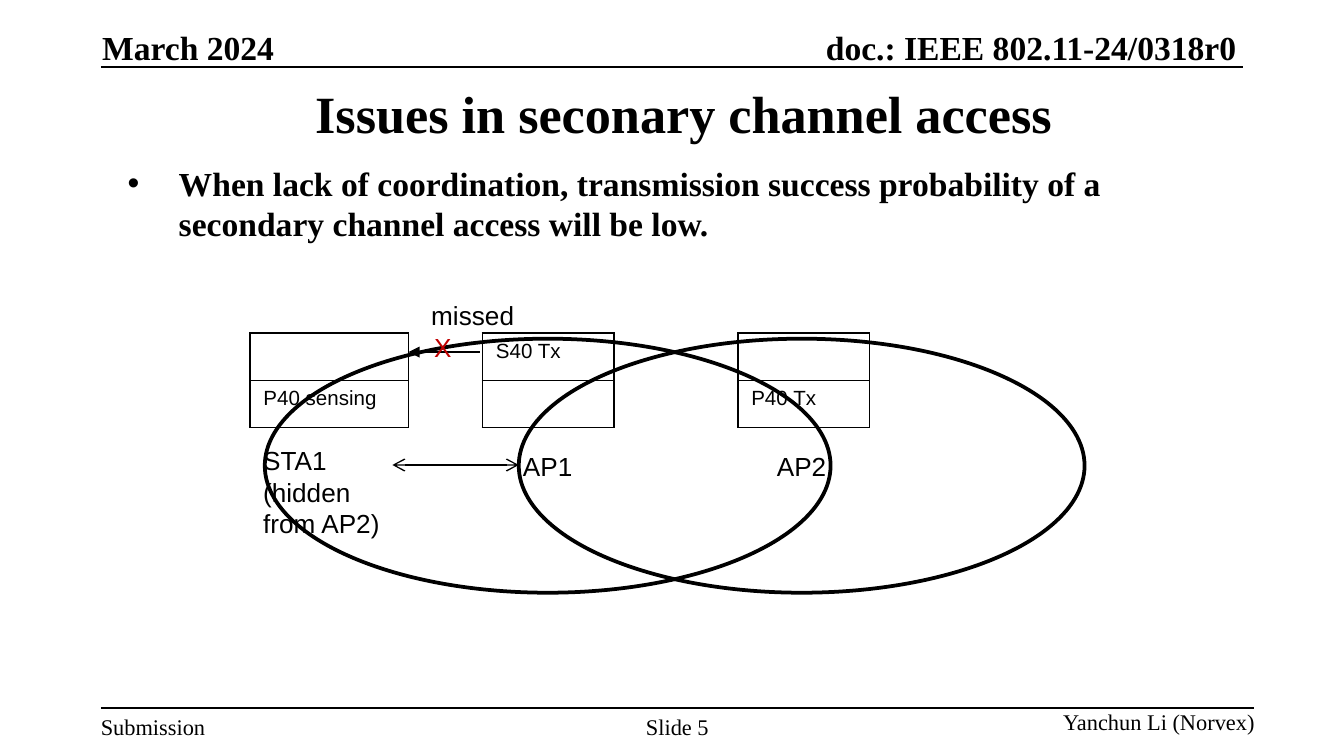
from dataclasses import dataclass
from typing import Any

from lxml import etree
from pptx import Presentation
from pptx import util as u
from pptx.dml import color
from pptx.enum import shapes, text
from pptx.oxml import ns

SERIF, SANS = "Times New Roman", "Arial"
BLACK, RED = "000000", "C00000"
LEFT, CENTER, RIGHT = text.PP_ALIGN.LEFT, text.PP_ALIGN.CENTER, text.PP_ALIGN.RIGHT
TOP, MIDDLE, BOTTOM = text.MSO_ANCHOR.TOP, text.MSO_ANCHOR.MIDDLE, text.MSO_ANCHOR.BOTTOM
FIXED, GROW = text.MSO_AUTO_SIZE.NONE, text.MSO_AUTO_SIZE.SHAPE_TO_FIT_TEXT
Area = tuple[float, float, float, float]


@dataclass
class Label:
    words: str
    area: Area
    size: float = 12
    font: str = SERIF
    bold: bool = False
    hex_color: str = BLACK
    align: Any = LEFT
    anchor: Any = TOP
    inset: tuple[float, float] = (0, 0)
    wrap: bool = True
    fit: Any = FIXED


@dataclass
class Channels:
    left: float
    width: float
    rows: tuple[str, str]


@dataclass
class Line:
    start: tuple[float, float]
    end: tuple[float, float]
    weight: float = 0.75
    head: str = "none"
    tail: str = "none"


HEADER = {"size": 18, "bold": True, "anchor": BOTTOM}
NOTE = {"size": 14, "font": SANS, "inset": (0.1, 0.05), "fit": GROW}
FRAME_LABELS = [
    Label("doc.: IEEE 802.11-24/0318r0", (5.61, 0.27, 3.59, 0.23), align=RIGHT, **HEADER),
    Label("Submission", (0.75, 5.31, 0.79, 0.15)),
    Label("Yanchun Li (Norvex)", (7.91, 5.27, 1.68, 0.3)),
    Label("Slide 5", (4.75, 5.31, 0.58, 0.15), align=CENTER),
    Label("March 2024", (0.76, 0.27, 1.79, 0.23), **HEADER),
]
NOTES = [
    Label("STA1\n(hidden from AP2)", (1.86, 3.26, 1.07, 0.81), **NOTE),
    Label("X", (3.23, 2.42, 0.05, 0.4), hex_color=RED, **NOTE),
    Label("missed", (3.11, 2.18, 0.82, 0.34), wrap=False, **NOTE),
]
ACCESS_POINTS = [("AP1", 1.97), ("AP2", 3.86)]
TABLES = [
    Channels(5.49, 0.98, ("", "P40 Tx")),
    Channels(3.59, 0.98, ("S40 Tx", "")),
    Channels(1.86, 1.18, ("", "P40 sensing")),
]
RULES = [Line((0.75, 0.5), (9.25, 0.5), 1), Line((0.75, 5.27), (9.33, 5.27), 1)]
ARROWS = [
    Line((3.57, 2.62), (3.04, 2.62), tail="triangle"),
    Line((2.92, 3.46), (3.86, 3.46), head="arrow", tail="arrow"),
]


def rgb(value: str) -> color.RGBColor:
    """Turn a hex string into a colour."""
    return color.RGBColor.from_string(value)


def write(frame: Any, words: str, *, size: float, font: str = SERIF, bold: bool = False,
          hex_color: str = BLACK, align: Any = LEFT) -> None:
    """Fill a text frame with formatted paragraphs."""
    frame.text = words
    for para in frame.paragraphs:
        para.alignment = align
        for span in para.runs:
            span.font.name, span.font.size = font, u.Pt(size)
            span.font.bold = bold
            span.font.color.rgb = rgb(hex_color)


def set_frame(frame: Any, inset: tuple[float, float], anchor: Any = TOP,
              wrap: bool = True, fit: Any = FIXED) -> None:
    """Set insets, anchor, wrapping and fit of a text frame."""
    frame.auto_size = fit
    frame.word_wrap, frame.vertical_anchor = wrap, anchor
    frame.margin_left = frame.margin_right = u.Inches(inset[0])
    frame.margin_top = frame.margin_bottom = u.Inches(inset[1])


def place(box: Any, area: Area) -> None:
    """Move and size a placeholder."""
    box.left, box.top, box.width, box.height = map(u.Inches, area)


def add_label(page: Any, label: Label) -> None:
    """Draw one text box."""
    box = page.shapes.add_textbox(*map(u.Inches, label.area))
    set_frame(box.text_frame, label.inset, label.anchor, label.wrap, label.fit)
    write(box.text_frame, label.words, size=label.size, font=label.font, bold=label.bold,
          hex_color=label.hex_color, align=label.align)


def add_coverage(page: Any, name: str, left: float) -> None:
    """Draw the coverage ellipse of an access point."""
    area = map(u.Inches, (left, 2.52, 4.21, 1.89))
    ellipse = page.shapes.add_shape(shapes.MSO_SHAPE.OVAL, *area)
    ellipse.shadow.inherit = False
    ellipse.fill.background()
    ellipse.line.color.rgb = rgb(BLACK)
    ellipse.line.width = u.Pt(2)
    set_frame(ellipse.text_frame, (0.1, 0.05), MIDDLE)
    write(ellipse.text_frame, name, size=14, font=SANS, align=CENTER)


def add_borders(cell: Any) -> None:
    """Give a table cell a thin black border on each side."""
    props = cell._tc.get_or_add_tcPr()
    for side in ("lnL", "lnR", "lnT", "lnB"):
        edge = etree.SubElement(props, ns.qn(f"a:{side}"), w=str(u.Pt(1)))
        fill = etree.SubElement(edge, ns.qn("a:solidFill"))
        etree.SubElement(fill, ns.qn("a:srgbClr"), val=BLACK)


def add_channels(page: Any, channels: Channels) -> None:
    """Draw a table of secondary and primary channel."""
    area = map(u.Inches, (channels.left, 2.48, channels.width, 0.7))
    table = page.shapes.add_table(2, 1, *area).table
    table.first_row = table.horz_banding = False
    for index, words in enumerate(channels.rows):
        cell = table.cell(index, 0)
        add_borders(cell)
        cell.fill.background()
        if words:
            write(cell.text_frame, words, size=11, font=SANS)
        else:
            cell.margin_top = cell.margin_bottom = 0


def add_line(page: Any, line: Line) -> None:
    """Draw a straight line with optional arrowheads."""
    ends = map(u.Inches, line.start + line.end)
    rule = page.shapes.add_connector(shapes.MSO_CONNECTOR.STRAIGHT, *ends)
    rule.line.color.rgb = rgb(BLACK)
    rule.line.width = u.Pt(line.weight)
    stroke = rule.line._get_or_add_ln()
    etree.SubElement(stroke, ns.qn("a:headEnd"), type=line.head)
    etree.SubElement(stroke, ns.qn("a:tailEnd"), type=line.tail)
    etree.SubElement(rule._element.spPr, ns.qn("a:effectLst"))


def fill_placeholders(page: Any) -> None:
    """Write the title and the bulleted statement."""
    title, body = page.shapes.title, page.placeholders[1]
    place(title, (0.67, 0.67, 8.83, 0.41))
    set_frame(title.text_frame, (0.07, 0.07), MIDDLE)
    write(title.text_frame, "Issues in seconary channel access", size=28, bold=True, align=CENTER)
    title.text_frame.paragraphs[0].line_spacing = 0.85

    place(body, (0.76, 1.14, 8.49, 3.93))
    set_frame(body.text_frame, (0.07, 0.07))
    write(body.text_frame, "When lack of coordination, transmission success probability of a "
          "secondary channel access will be low.", size=18, bold=True)
    para = body.text_frame.paragraphs[0]
    para.space_before = u.Pt(3.6)
    props = para._p.get_or_add_pPr()
    props.set("marL", str(u.Inches(0.5)))
    props.set("indent", str(u.Inches(-0.38)))


def main() -> None:
    """Build and save the slide."""
    deck = Presentation()
    deck.slide_width, deck.slide_height = u.Inches(10), u.Inches(10 * 9 / 16)
    page = deck.slides.add_slide(deck.slide_layouts[1])
    fill_placeholders(page)
    for rule in RULES:
        add_line(page, rule)
    for label in FRAME_LABELS:
        add_label(page, label)
    for name, left in ACCESS_POINTS:
        add_coverage(page, name, left)
    for channels in TABLES:
        add_channels(page, channels)
    for arrow in ARROWS:
        add_line(page, arrow)
    for note in NOTES:
        add_label(page, note)
    deck.save("out.pptx")


if __name__ == "__main__":
    main()
